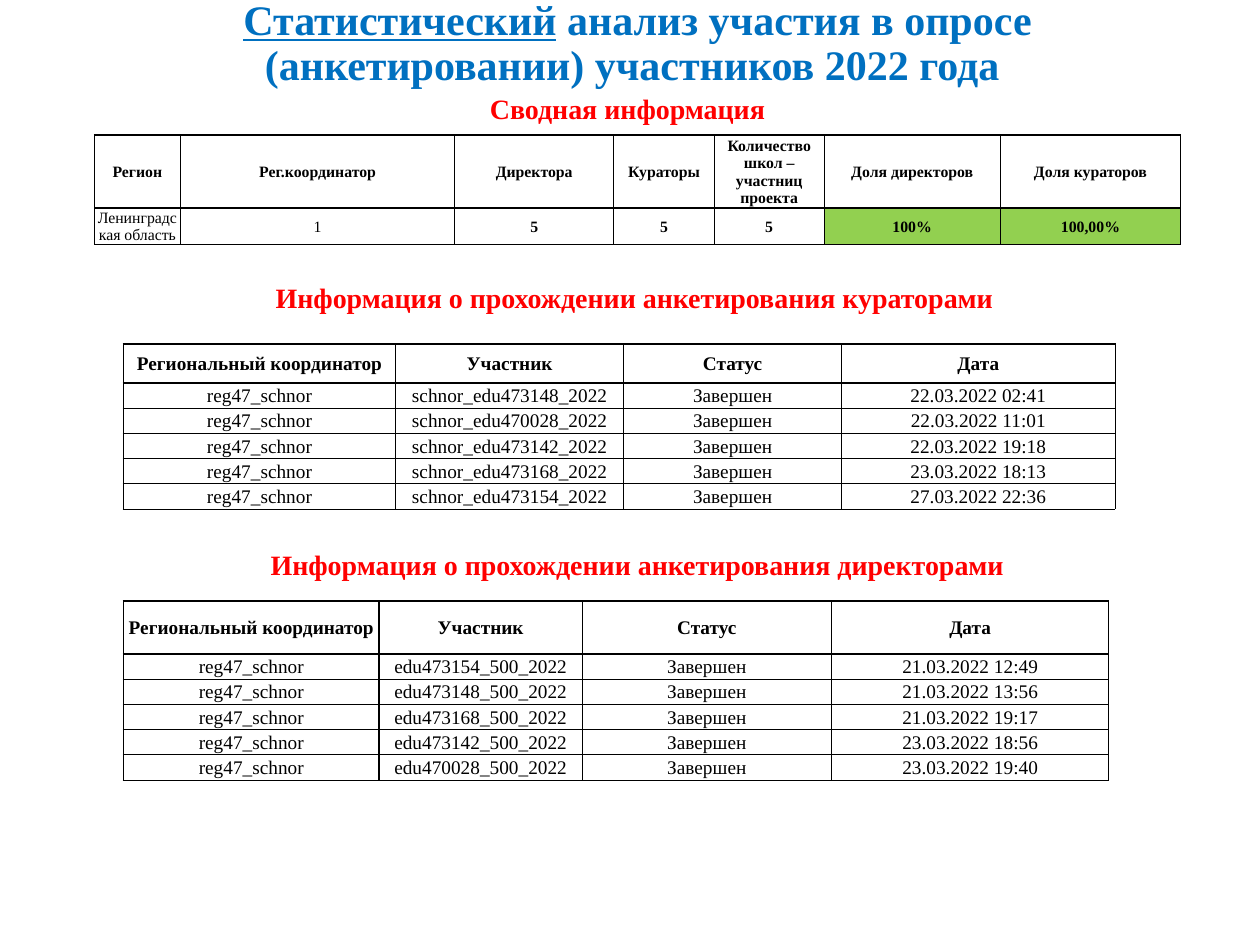
from lxml import etree
from pptx import Presentation
from pptx.dml.color import RGBColor
from pptx.enum.text import MSO_ANCHOR, MSO_AUTO_SIZE, PP_ALIGN
from pptx.oxml.ns import qn
from pptx.util import Inches, Pt

CENTER = PP_ALIGN.CENTER
MIDDLE = MSO_ANCHOR.MIDDLE
NO_AUTOFIT = MSO_AUTO_SIZE.NONE
GROW = MSO_AUTO_SIZE.SHAPE_TO_FIT_TEXT

BLACK = RGBColor(0x00, 0x00, 0x00)
BLUE = RGBColor(0x00, 0x70, 0xC0)
RED = RGBColor(0xFF, 0x00, 0x00)
GREEN = RGBColor(0x92, 0xD0, 0x50)
THIN, THICK = Pt(0.5), Pt(1)

SUMMARY = [
    ["Регион", "Рег.координатор", "Директора", "Кураторы",
     "Количество школ – участниц проекта", "Доля директоров", "Доля кураторов"],
    ["Ленинградская область", "1", "5", "5", "5", "100%", "100,00%"],
]
SURVEY_HEADER = ["Региональный координатор", "Участник", "Статус", "Дата"]
CURATORS = [
    ("schnor_edu473148_2022", "22.03.2022 02:41"),
    ("schnor_edu470028_2022", "22.03.2022 11:01"),
    ("schnor_edu473142_2022", "22.03.2022 19:18"),
    ("schnor_edu473168_2022", "23.03.2022 18:13"),
    ("schnor_edu473154_2022", "27.03.2022 22:36"),
]
DIRECTORS = [
    ("edu473154_500_2022", "21.03.2022 12:49"),
    ("edu473148_500_2022", "21.03.2022 13:56"),
    ("edu473168_500_2022", "21.03.2022 19:17"),
    ("edu473142_500_2022", "23.03.2022 18:56"),
    ("edu470028_500_2022", "23.03.2022 19:40"),
]


def survey_rows(records):
    return [SURVEY_HEADER] + [
        ["reg47_schnor", participant, "Завершен", date] for participant, date in records
    ]


class ReportSlide:
    font_name = "Times New Roman"

    def __init__(self, slide):
        self.slide = slide

    def style(self, paragraph, size, color, bold=True):
        font = paragraph.font
        font.name = self.font_name
        font.size = Pt(size)
        font.bold = bold
        font.color.rgb = color

    def title(self, underlined, rest, left, top, width, height):
        shape = self.slide.shapes.title
        shape.left, shape.top = Inches(left), Inches(top)
        shape.width, shape.height = Inches(width), Inches(height)
        frame = shape.text_frame
        frame.word_wrap = True
        frame.auto_size = NO_AUTOFIT
        frame.vertical_anchor = MIDDLE
        paragraph = frame.paragraphs[0]
        paragraph.alignment = CENTER
        paragraph.line_spacing = 0.9
        paragraph.space_before = Pt(0)
        self.style(paragraph, 24, BLUE)
        run = paragraph.add_run()
        run.text = underlined
        run.font.underline = True
        paragraph.add_run().text = rest

    def heading(self, text, left, top, width, wrap=True):
        shape = self.slide.shapes.add_textbox(
            Inches(left), Inches(top), Inches(width), Inches(0.37))
        frame = shape.text_frame
        frame.word_wrap = wrap
        frame.auto_size = GROW
        paragraph = frame.paragraphs[0]
        paragraph.text = text
        self.style(paragraph, 16, RED)

    def borders(self, cell, widths):
        properties = cell._tc.get_or_add_tcPr()
        for side, width in zip("LRTB", widths):
            line = etree.SubElement(properties, qn(f"a:ln{side}"), w=str(width))
            fill = etree.SubElement(line, qn("a:solidFill"))
            etree.SubElement(fill, qn("a:srgbClr"), val=str(BLACK))

    def cell(self, cell, text, size, bold, fill, widths):
        cell.margin_left = cell.margin_right = cell.margin_top = Inches(0.01)
        cell.margin_bottom = 0
        cell.vertical_anchor = MIDDLE
        paragraph = cell.text_frame.paragraphs[0]
        paragraph.text = text
        paragraph.alignment = CENTER
        self.style(paragraph, size, BLACK, bold)
        self.borders(cell, widths)
        if fill is None:
            cell.fill.background()
        else:
            cell.fill.solid()
            cell.fill.fore_color.rgb = fill

    def table(self, rows, left, top, column_widths, header_height, row_height,
              size, thick_key_column=True, bold_from=None, green_from=None):
        height = header_height + row_height * (len(rows) - 1)
        table = self.slide.shapes.add_table(
            len(rows), len(column_widths), Inches(left), Inches(top),
            Inches(sum(column_widths)), Inches(height)).table
        table.first_row = table.horz_banding = False
        for column, width in zip(table.columns, column_widths):
            column.width = Inches(width)
        for r, values in enumerate(rows):
            header = r == 0
            table.rows[r].height = Inches(header_height if header else row_height)
            for c, text in enumerate(values):
                bold = header or (bold_from is not None and c >= bold_from)
                green = not header and green_from is not None and c >= green_from
                thick_left = (thick_key_column and c <= 1) or (header and c == 0)
                thick = (thick_left, thick_key_column and c == 0, r <= 1, header)
                widths = [THICK if is_thick else THIN for is_thick in thick]
                self.cell(table.cell(r, c), text, size, bold,
                          GREEN if green else None, widths)


def main():
    presentation = Presentation()
    presentation.slide_width = Inches(10)
    presentation.slide_height = Inches(7.5)
    report = ReportSlide(presentation.slides.add_slide(presentation.slide_layouts[5]))

    report.title("Статистический",
                 " анализ участия в опросе (анкетировании) участников 2022 года ",
                 0.75, 0.13, 8.62, 0.44)
    report.table(SUMMARY, 0.75, 1.07, [0.68, 2.18, 1.26, 0.8, 0.87, 1.4, 1.43],
                 0.58, 0.29, 9, thick_key_column=False, bold_from=2, green_from=5)
    report.table(survey_rows(CURATORS), 0.98, 2.73, [2.16, 1.81, 1.73, 2.17],
                 0.31, 0.2, 11)
    report.heading("Сводная информация", 3.79, 0.68, 3.31)
    report.heading("Информация о прохождении анкетирования кураторами",
                   2.09, 2.18, 5.97, wrap=False)
    report.heading("Информация о прохождении анкетирования директорами",
                   2.05, 4.3, 7.09)
    report.table(survey_rows(DIRECTORS), 0.98, 4.77, [2.03, 1.61, 1.98, 2.2],
                 0.42, 0.2, 11)
    presentation.save("out.pptx")


if __name__ == "__main__":
    main()
